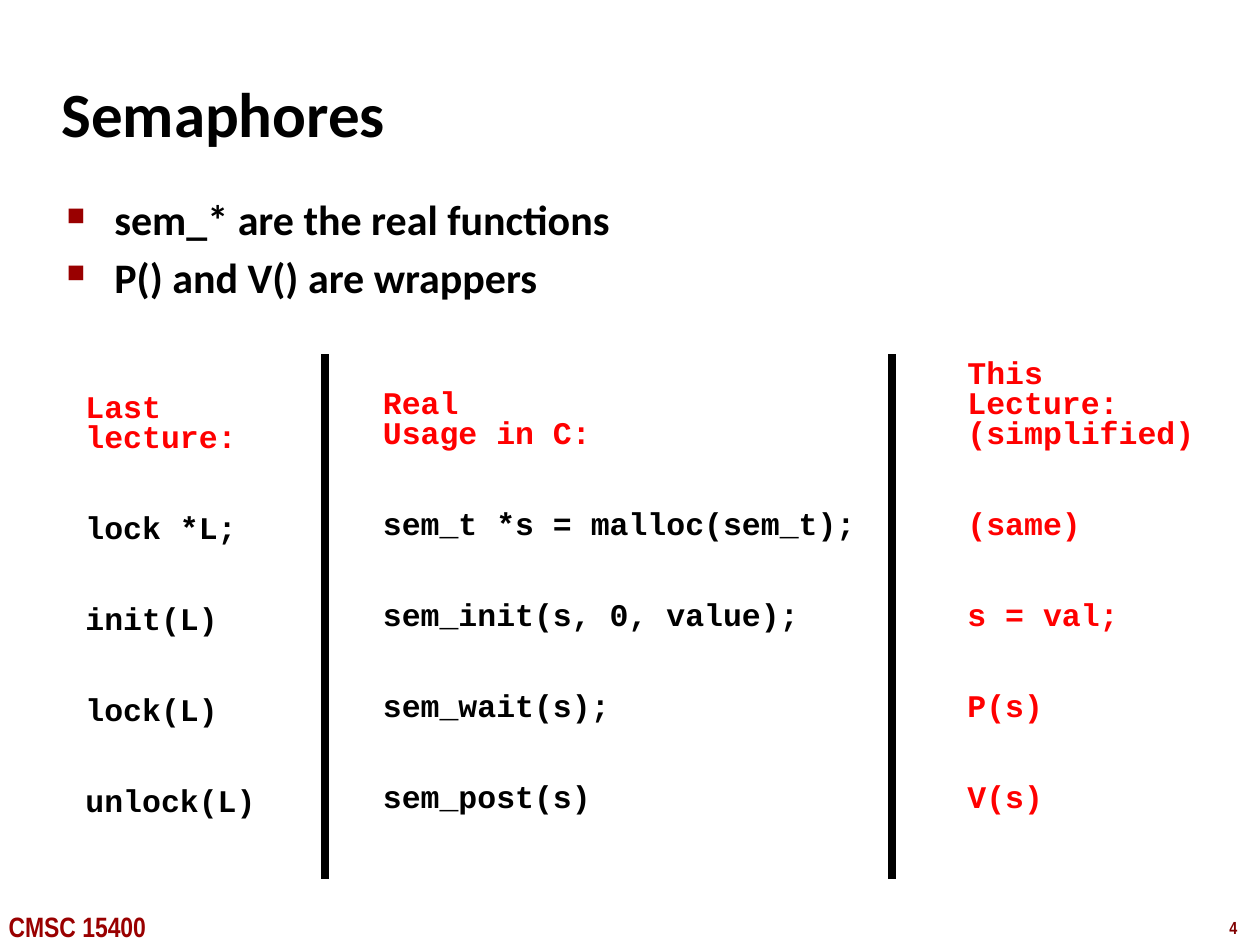
"""Build the slide comparing lock calls with semaphore calls."""
from dataclasses import dataclass

import pptx
import pptx.dml.color
import pptx.enum.shapes
import pptx.enum.text
import pptx.oxml.ns
import pptx.util
from lxml import etree

Inches = pptx.util.Inches
Pt = pptx.util.Pt
qn = pptx.oxml.ns.qn

COLORS = {"black": "000000", "red": "FF0000", "crimson": "990000", "maroon": "800000"}
ROW_GAP = Pt(34.6)
RULE_TOP, RULE_BOTTOM = 2.81, 6.98


@dataclass(frozen=True)
class Style:
    font: str
    size: int
    color: str


@dataclass(frozen=True)
class Frame:
    left: float
    top: float
    width: float
    height: float


@dataclass(frozen=True)
class Column:
    frame: Frame
    heading: tuple[str, ...]
    calls: tuple[str, ...]
    call_color: str


TITLE = Style("Calibri", 36, "black")
BULLET = Style("Calibri", 24, "black")
COURSE = Style("Arial Narrow", 16, "crimson")
NUMBER = Style("Arial Narrow", 10, "maroon")

COLUMNS = (
    Column(Frame(0.58, 3.08, 2, 3.75), ("Last", "lecture:"),
           ("lock *L;", "init(L)", "lock(L)", "unlock(L)"), "black"),
    Column(Frame(2.94, 3.05, 4.25, 3.99), ("Real", "Usage in C:"),
           ("sem_t *s = malloc(sem_t);", "sem_init(s, 0, value);",
            "sem_wait(s);", "sem_post(s)"), "black"),
    Column(Frame(7.58, 2.81, 2, 4.23), ("This", "Lecture:", "(simplified)"),
           ("(same)", "s = val;", "P(s)", "V(s)"), "red"),
)


def add_text(page, frame: Frame, lines: tuple[str, ...], style: Style, wrap: bool = True):
    """Add a text box with one paragraph per line."""
    box = page.shapes.add_textbox(Inches(frame.left), Inches(frame.top),
                                  Inches(frame.width), Inches(frame.height))
    box.text_frame.word_wrap = wrap
    box.text_frame.text = "\n".join(lines)
    for para in box.text_frame.paragraphs:
        for span in para.runs:
            span.font.name = style.font
            span.font.size = Pt(style.size)
            span.font.bold = True
            span.font.color.rgb = pptx.dml.color.RGBColor.from_string(COLORS[style.color])
    return box


def add_bullet(para) -> None:
    """Give a paragraph a small square bullet with a hanging indent."""
    props = para._p.get_or_add_pPr()
    props.set("marL", str(Inches(0.38)))
    props.set("indent", str(Inches(-0.38)))
    tint = etree.SubElement(props, qn("a:buClr"))
    etree.SubElement(tint, qn("a:srgbClr"), val=COLORS["crimson"])
    etree.SubElement(props, qn("a:buSzPct"), val="60000")
    etree.SubElement(props, qn("a:buChar"), char="■")


def add_column(page, column: Column) -> None:
    """Add a red heading followed by evenly spaced calls."""
    box = add_text(page, column.frame, column.heading + column.calls,
                   Style("Courier New", 18, column.call_color))
    box.text_frame.margin_right = 0
    for index, para in enumerate(box.text_frame.paragraphs):
        para.line_spacing = 0.8
        if index >= len(column.heading):
            para.space_before = ROW_GAP
        else:
            para.runs[0].font.color.rgb = pptx.dml.color.RGBColor.from_string(COLORS["red"])


def add_rule(page, x: float) -> None:
    """Add a thick vertical divider."""
    rule = page.shapes.add_connector(pptx.enum.shapes.MSO_CONNECTOR.STRAIGHT,
                                     Inches(x), Inches(RULE_TOP), Inches(x), Inches(RULE_BOTTOM))
    rule.line.width = Pt(4.5)
    rule.line.color.rgb = pptx.dml.color.RGBColor.from_string(COLORS["black"])
    etree.SubElement(rule._element.spPr, qn("a:effectLst"))


def main() -> None:
    """Build and save the deck."""
    deck = pptx.Presentation()
    deck.slide_width, deck.slide_height = Inches(10), Inches(7.5)
    page = deck.slides.add_slide(deck.slide_layouts[6])

    add_text(page, Frame(9.66, 7.23, 0.34, 0.27), ("4",), NUMBER, wrap=False)
    add_text(page, Frame(-0.03, 7.17, 1.42, 0.37), ("CMSC 15400",), COURSE, wrap=False)
    title = add_text(page, Frame(0.39, 0.48, 8.3, 0.83), ("Semaphores",), TITLE)
    title.text_frame.vertical_anchor = pptx.enum.text.MSO_ANCHOR.MIDDLE

    body = add_text(page, Frame(0.43, 1.49, 8.64, 1.18),
                    ("sem_* are the real functions", "P() and V() are wrappers"), BULLET)
    for para in body.text_frame.paragraphs:
        add_bullet(para)
    body.text_frame.paragraphs[1].space_before = Pt(4)

    for column in COLUMNS:
        add_column(page, column)
    for x in (2.58, 7.08):
        add_rule(page, x)
    deck.save("out.pptx")


if __name__ == "__main__":
    main()
